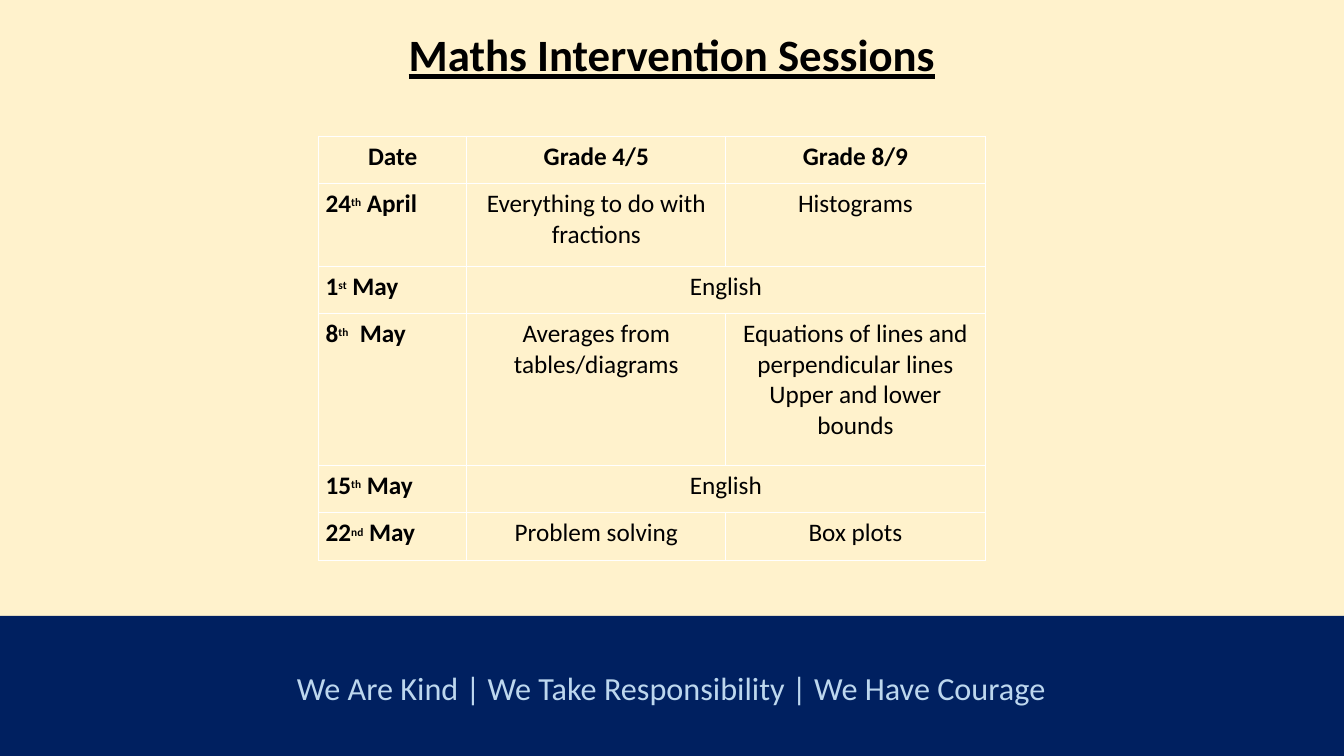
"""Build the slide that lists the maths intervention sessions."""
from dataclasses import dataclass

from lxml.etree import SubElement as Sub
from pptx import Presentation as Deck
from pptx.dml.color import RGBColor as Rgb
from pptx.enum.shapes import MSO_SHAPE as Kind
from pptx.enum.text import MSO_ANCHOR as Anchor, PP_ALIGN as Align
from pptx.oxml.ns import qn
from pptx.util import Inches, Pt


@dataclass(frozen=True)
class Theme:
    font: str = "Calibri"
    page: str = "FFF2CC"
    band: str = "002060"
    motto: str = "BDD7EE"
    ink: str = "000000"
    rule: str = "FFFFFF"
    head: int = 32
    foot: int = 23
    cell: int = 18
    small: int = 14


@dataclass(frozen=True)
class Week:
    day: str
    suffix: str
    month: str
    lower: str
    upper: str = ""


LOOK = Theme()
HEADS = ("Date", "Grade 4/5", "Grade 8/9")
WEEKS = (
    Week("24", "th", " April", "Everything to do with fractions", "Histograms"),
    Week("1", "st", " May", "English"),
    Week("8", "th", "  May", "Averages from tables/diagrams",
         "Equations of lines and perpendicular lines\nUpper and lower bounds"),
    Week("15", "th", " May", "English"),
    Week("22", "nd", " May", "Problem solving", "Box plots"),
)
WIDTHS = (1.47, 2.57, 2.57)
HEIGHTS = (0.47, 0.82, 0.47, 1.51, 0.47, 0.47)


def style(run, size: int, color: str, bold: bool = False) -> None:
    font = run.font
    font.name, font.size, font.bold = LOOK.font, Pt(size), bold
    font.color.rgb = Rgb.from_string(color)


def write(frame, text: str, size: int, color: str, bold: bool = False) -> None:
    frame.text = text
    for para in frame.paragraphs:
        para.alignment = Align.CENTER
        for run in para.runs:
            style(run, size, color, bold)


def write_date(frame, week: Week) -> None:
    para = frame.paragraphs[0]
    para.alignment = Align.LEFT
    for part in (week.day, week.suffix, week.month):
        run = para.add_run()
        run.text = part
        raised = part == week.suffix
        style(run, LOOK.small if raised else LOOK.cell, LOOK.ink, True)
        if raised:
            run.font._element.set("baseline", "30000")


def frame_cell(cell) -> None:
    cell.margin_left = cell.margin_right = Inches(0.07)
    cell.margin_top = cell.margin_bottom = Inches(0.05)
    props = cell._tc.get_or_add_tcPr()
    for side in ("lnL", "lnR", "lnT", "lnB"):
        line = Sub(props, qn(f"a:{side}"), w=str(Pt(0.75)))
        Sub(Sub(line, qn("a:solidFill")), qn("a:srgbClr"), val=LOOK.rule)
    cell.fill.background()


def add_title(slide) -> None:
    title = slide.shapes.title
    title.left, title.top = Inches(3.16), Inches(0.28)
    title.width, title.height = Inches(7.01), Inches(1.18)
    frame = title.text_frame
    frame.vertical_anchor = Anchor.TOP
    write(frame, "Maths Intervention Sessions", LOOK.head, LOOK.ink, True)
    para = frame.paragraphs[0]
    para.line_spacing = 0.9
    para.runs[0].font.underline = True


def add_band(slide) -> None:
    band = slide.shapes.add_shape(
        Kind.RECTANGLE, 0, Inches(6.11), Inches(13.33), Inches(1.39))
    band.shadow.inherit = False
    band.fill.solid()
    band.fill.fore_color.rgb = Rgb.from_string(LOOK.band)
    band.line.fill.background()
    frame = band.text_frame
    frame.vertical_anchor = Anchor.MIDDLE
    frame.margin_top = Inches(0.13)
    write(frame, "We Are Kind | We Take Responsibility | We Have Courage",
          LOOK.foot, LOOK.motto)
    frame.paragraphs[0].line_spacing = 0.9


def add_plan(slide) -> None:
    grid = slide.shapes.add_table(
        len(HEIGHTS), len(WIDTHS), Inches(3.16), Inches(1.35),
        Inches(sum(WIDTHS)), Inches(sum(HEIGHTS))).table
    grid.first_row = grid.horz_banding = False
    for col, width in zip(grid.columns, WIDTHS):
        col.width = Inches(width)
    for row, height in zip(grid.rows, HEIGHTS):
        row.height = Inches(height)
    for cell in grid.iter_cells():
        frame_cell(cell)
    for col, head in enumerate(HEADS):
        write(grid.cell(0, col).text_frame, head, LOOK.cell, LOOK.ink, True)
    for row, week in enumerate(WEEKS, 1):
        date, lower, upper = (grid.cell(row, col) for col in range(3))
        write_date(date.text_frame, week)
        write(lower.text_frame, week.lower, LOOK.cell, LOOK.ink)
        if week.upper:
            write(upper.text_frame, week.upper, LOOK.cell, LOOK.ink)
        else:
            lower.merge(upper)


def main() -> None:
    deck = Deck()
    deck.slide_width, deck.slide_height = Inches(13.33), Inches(7.5)
    slide = deck.slides.add_slide(deck.slide_layouts[5])
    back = slide.background.fill
    back.solid()
    back.fore_color.rgb = Rgb.from_string(LOOK.page)
    add_band(slide)
    add_title(slide)
    add_plan(slide)
    deck.save("out.pptx")


if __name__ == "__main__":
    main()
